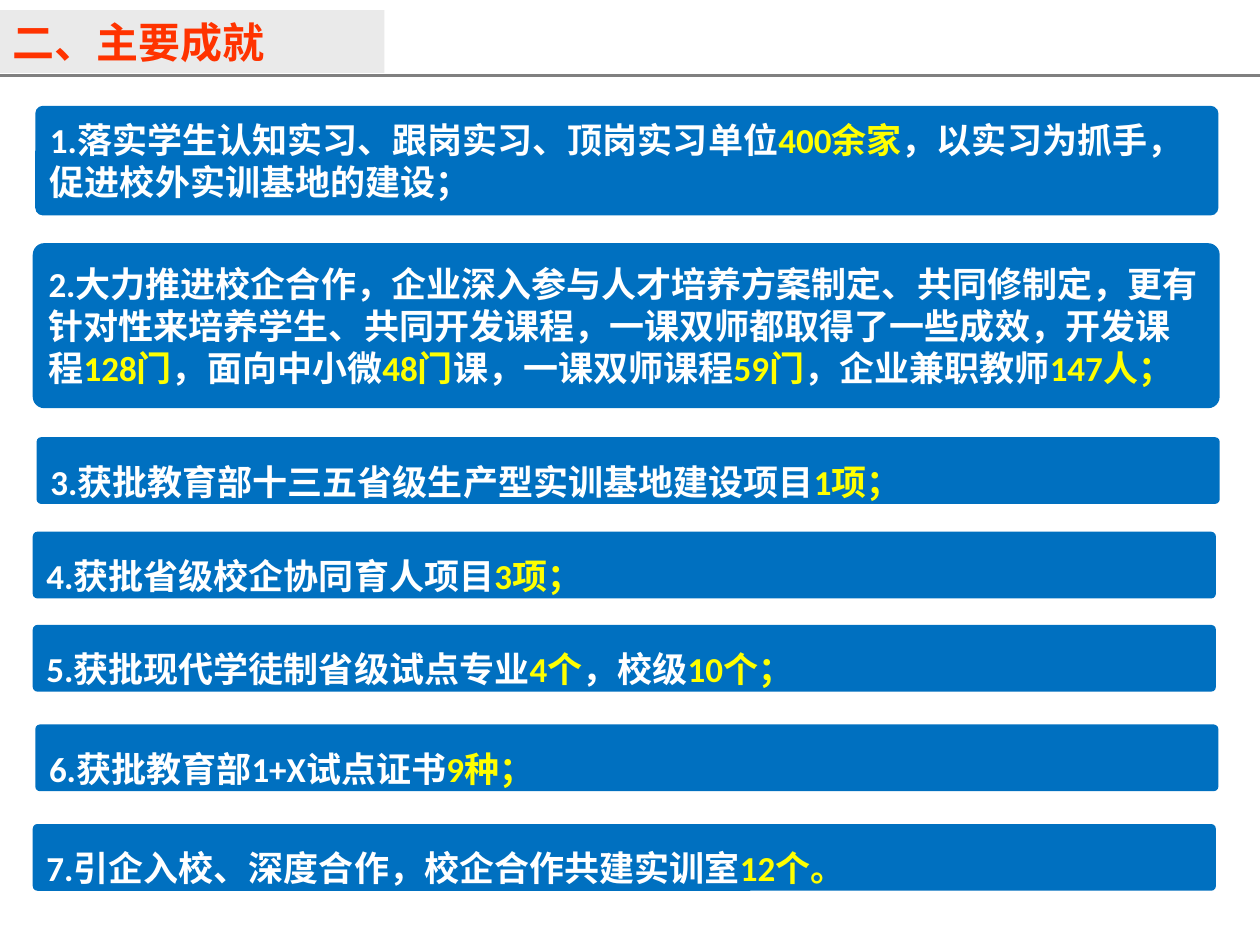
"""Build the slide listing the main achievements of school-enterprise cooperation."""
from dataclasses import dataclass

from lxml.etree import SubElement
from pptx import Presentation
from pptx.dml.color import RGBColor
from pptx.enum.shapes import MSO_CONNECTOR, MSO_SHAPE
from pptx.enum.text import MSO_ANCHOR, PP_ALIGN
from pptx.oxml.ns import qn
from pptx.util import Inches, Pt


@dataclass(frozen=True)
class Theme:
    rule: RGBColor = RGBColor.from_string("808080")
    heading_fill: RGBColor = RGBColor.from_string("EAEAEA")
    heading: RGBColor = RGBColor.from_string("FF3300")
    bar: RGBColor = RGBColor.from_string("0070C0")
    body: RGBColor = RGBColor.from_string("FFFFFF")
    figure: RGBColor = RGBColor.from_string("FFFF00")
    heading_font: str = "Arial"
    body_font: str = "Calibri"
    heading_size: Pt = Pt(24)
    body_size: Pt = Pt(20)


theme = Theme()


def add_panel(preset, box, fill, anchor):
    panel = slide.shapes.add_shape(preset, *map(Inches, box))
    panel.shadow.inherit = False
    panel.fill.solid()
    panel.fill.fore_color.rgb = fill
    panel.line.fill.background()
    panel.text_frame.word_wrap = True
    panel.text_frame.vertical_anchor = anchor
    panel.text_frame.paragraphs[0].alignment = PP_ALIGN.LEFT
    return panel


def add_run(paragraph, text, font, size, color):
    run = paragraph.add_run()
    run.text = text
    run.font.name = font
    run.font.size = size
    run.font.bold = True
    run.font.color.rgb = color


prs = Presentation()
prs.slide_width, prs.slide_height = Inches(10), Inches(7.5)
slide = prs.slides.add_slide(prs.slide_layouts[6])

header_rule = slide.shapes.add_connector(
    MSO_CONNECTOR.STRAIGHT, Inches(0), Inches(0.6), Inches(10), Inches(0.6))
header_rule.line.color.rgb = theme.rule
header_rule.line.width = Pt(1.5)
SubElement(header_rule._element.spPr, qn("a:effectLst"))

heading = add_panel(MSO_SHAPE.RECTANGLE, (0, 0.08, 3.05, 0.5), theme.heading_fill, MSO_ANCHOR.TOP)
add_run(heading.text_frame.paragraphs[0], "二、主要成就",
        theme.heading_font, theme.heading_size, theme.heading)

achievements = [
    ((0.28, 0.84, 9.39, 0.87), 1.0,
     ["1.落实学生认知实习、跟岗实习、顶岗实习单位", "400余家",
      "，以实习为抓手，促进校外实训基地的建设；"]),
    ((0.26, 1.93, 9.42, 1.31), 1.0,
     ["2.大力推进校企合作，企业深入参与人才培养方案制定、共同修制定，"
      "更有针对性来培养学生、共同开发课程，一课双师都取得了一些成效，开发课程", "128门",
      "，面向中小微", "48门", "课，一课双师课程", "59门", "，企业兼职教师", "147人；"]),
    ((0.29, 3.47, 9.39, 0.53), 1.5,
     ["3.获批教育部十三五省级生产型实训基地建设项目", "1项；"]),
    ((0.26, 4.22, 9.39, 0.53), 1.5, ["4.获批省级校企协同育人项目", "3项；"]),
    ((0.26, 4.96, 9.39, 0.53), 1.5,
     ["5.获批现代学徒制省级试点专业", "4个", "，校级", "10个；"]),
    ((0.28, 5.75, 9.39, 0.53), 1.5, ["6.获批教育部1+X试点证书", "9种；"]),
    ((0.26, 6.54, 9.39, 0.53), 1.5,
     ["7.引企入校、深度合作，校企合作共建实训室", "12个。"]),
]

for box, line_spacing, phrases in achievements:
    bar = add_panel(MSO_SHAPE.ROUNDED_RECTANGLE, box, theme.bar, MSO_ANCHOR.MIDDLE)
    bar.adjustments[0] = 0.07
    statement = bar.text_frame.paragraphs[0]
    statement.line_spacing = line_spacing
    for index, phrase in enumerate(phrases):
        color = theme.figure if index % 2 else theme.body
        add_run(statement, phrase, theme.body_font, theme.body_size, color)

prs.save("out.pptx")
